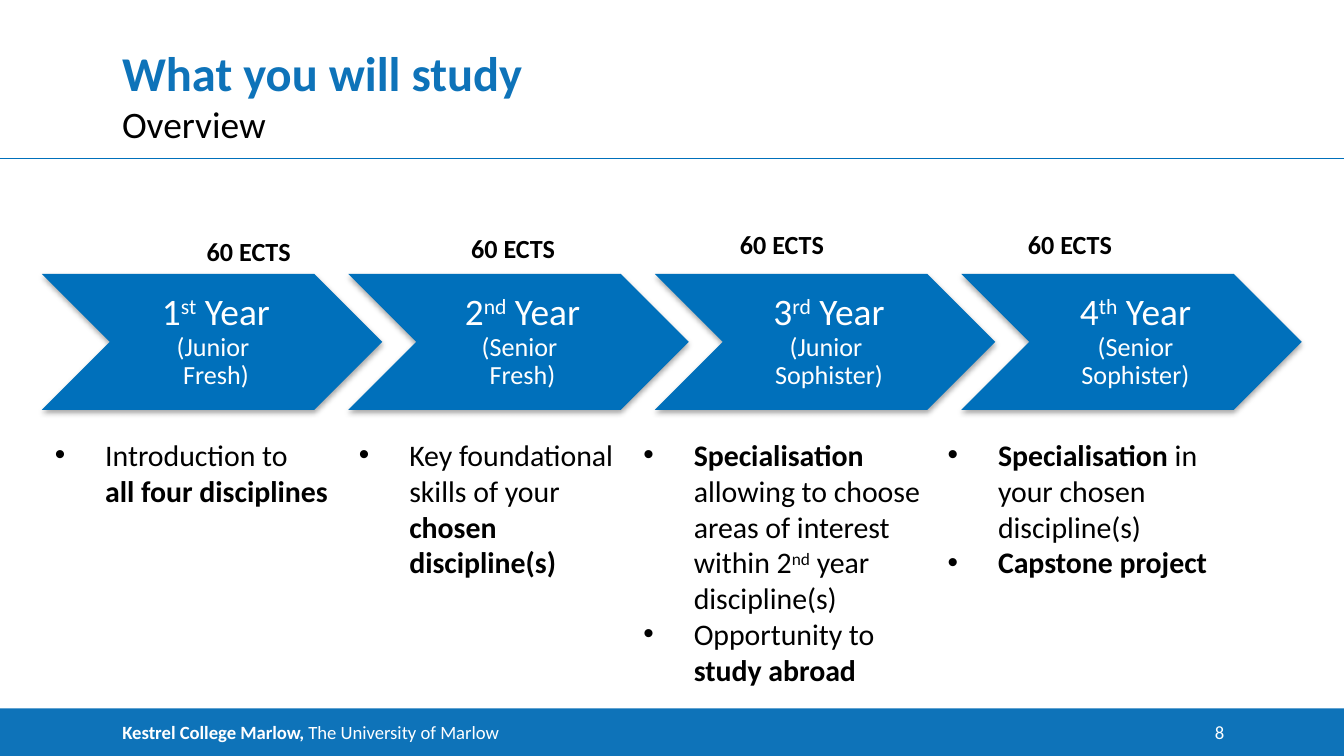
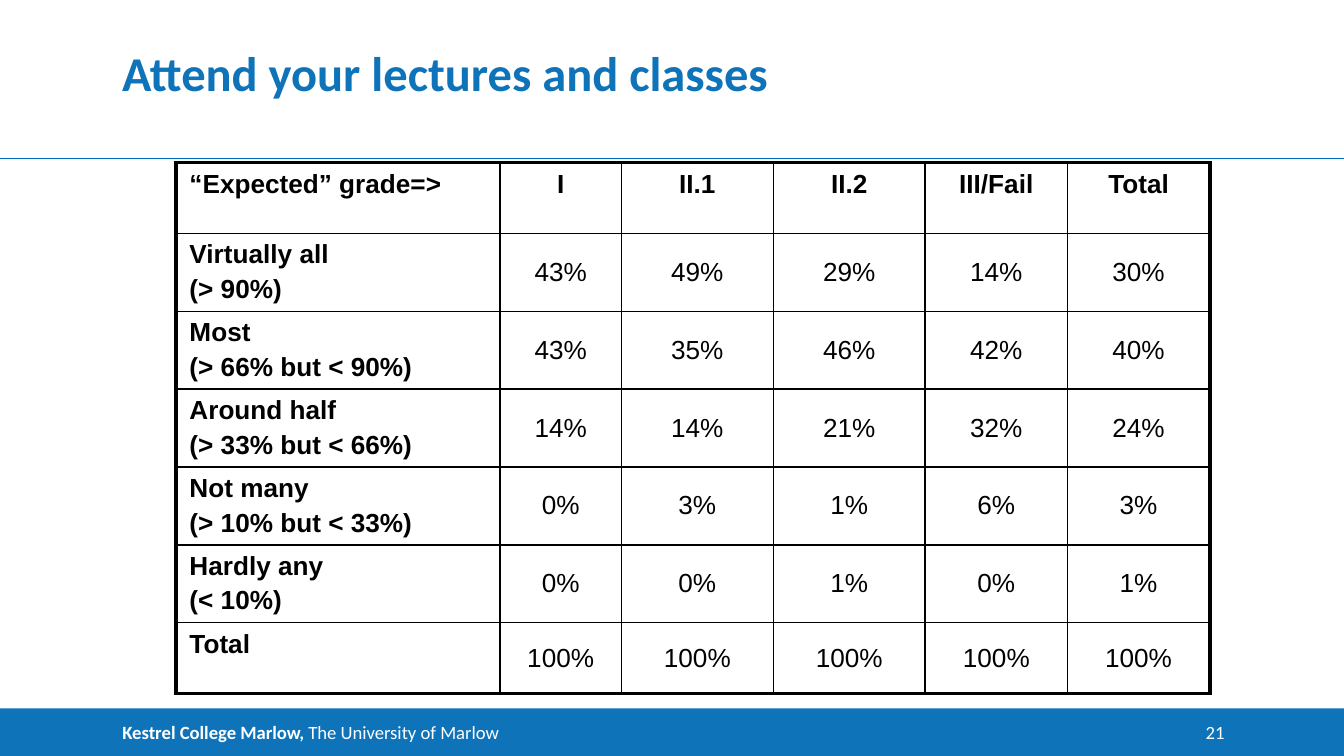
from copy import deepcopy
from dataclasses import dataclass
from typing import NamedTuple

from lxml.etree import SubElement
from pptx import Presentation
from pptx.dml.color import RGBColor
from pptx.enum.shapes import MSO_CONNECTOR, MSO_SHAPE
from pptx.enum.text import MSO_ANCHOR, PP_ALIGN
from pptx.oxml.ns import qn
from pptx.util import Pt


@dataclass(frozen=True)
class Theme:
    band: RGBColor = RGBColor(0x0E, 0x73, 0xB9)
    accent: RGBColor = RGBColor(0x00, 0x70, 0xBB)
    black: RGBColor = RGBColor(0, 0, 0)
    white: RGBColor = RGBColor(255, 255, 255)
    font: str = "Calibri"
    table_font: str = "Arial"
    title_size: float = 26
    heading_size: float = 20
    body_size: float = 16
    label_size: float = 14
    footer_size: float = 10


THEME = Theme()


class Box(NamedTuple):
    left: float
    top: float
    width: float
    height: float

    def lengths(self) -> list:
        return [Pt(value) for value in self]


class Span(NamedTuple):
    text: str
    bold: bool = False
    size: float | None = None
    raised: bool = False


@dataclass(frozen=True)
class StudyYear:
    number: str
    suffix: str
    stage: str
    credits_left: float
    credits_top: float
    points_left: float
    points_height: float
    points: list


STUDY_YEARS = [
    StudyYear("1", "st", "(Junior \nFresh)", 103.7, 122.4, 22.3, 46,
              [[Span("Introduction to \n"), Span("all four disciplines", True)]]),
    StudyYear("2", "nd", "(Senior \nFresh)", 245.3, 121, 185.2, 85,
              [[Span("Key foundational skills of your "), Span("chosen discipline(s)", True)]]),
    StudyYear("3", "rd", "(Junior \nSophister)", 389.3, 118.8, 337.6, 143,
              [[Span("Specialisation", True), Span(" allowing to choose areas of interest within 2"),
                Span("nd", raised=True), Span(" year discipline(s)")],
               [Span("Opportunity to "), Span("study abroad", True)]]),
    StudyYear("4", "th", "(Senior Sophister)", 543.6, 118.8, 500.6, 85,
              [[Span("Specialisation", True), Span(" in your chosen discipline(s)")],
               [Span("Capstone project", True)]]),
]

CHEVRON = Box(22.4, 146.8, 182.4, 72.8)
CHEVRON_PITCH = 164.2

COLUMN_WIDTHS = [173.6, 65, 81.4, 81.4, 76.2, 76.2]
ROW_HEIGHTS = [38, *[41.7] * 5, 38]
GRADE_ROWS = [
    ["“Expected” grade=>", "I", "II.1", "II.2", "III/Fail", "Total"],
    ["Virtually all\n(> 90%)", "43%", "49%", "29%", "14%", "30%"],
    ["Most\n(> 66% but < 90%)", "43%", "35%", "46%", "42%", "40%"],
    ["Around half\n(> 33% but < 66%)", "14%", "14%", "21%", "32%", "24%"],
    ["Not many\n(> 10% but < 33%)", "0%", "3%", "1%", "6%", "3%"],
    ["Hardly any\n(< 10%)", "0%", "0%", "1%", "0%", "1%"],
    ["Total", *["100%"] * 5],
]


def set_percent_spacing(paragraph, tag: str, percent: float) -> None:
    if tag == "a:spcBef":
        paragraph.space_before = Pt(0)
    else:
        paragraph.space_after = Pt(0)
    spacing = paragraph._p.pPr.find(qn(tag))
    spacing.remove(spacing[0])
    SubElement(spacing, qn("a:spcPct"), val=str(int(percent * 1000)))


def set_indent(paragraph, margin: float, first_line: float = 0, bullet: str = "") -> None:
    properties = paragraph._p.get_or_add_pPr()
    properties.set("marL", str(Pt(margin)))
    properties.set("indent", str(Pt(first_line)))
    if bullet:
        SubElement(properties, qn("a:buFont"), typeface="Arial")
        SubElement(properties, qn("a:buChar"), char=bullet)


def add_span(paragraph, span: Span, size: float, color: RGBColor, font: str) -> None:
    for index, line in enumerate(span.text.split("\n")):
        if index:
            paragraph.add_line_break()
            paragraph._p.findall(qn("a:br"))[-1].append(deepcopy(run._r.rPr))
        if index and not line:
            continue
        run = paragraph.add_run()
        run.text = line
        run.font.name = font
        run.font.size = Pt(span.size or size)
        run.font.bold = span.bold
        run.font.color.rgb = color
        if span.raised:
            run._r.rPr.set("baseline", "30000")


def write_text(frame, paragraphs: list, *, size: float, color: RGBColor = THEME.black,
               font: str = THEME.font, align=PP_ALIGN.LEFT, anchor=MSO_ANCHOR.TOP,
               insets: tuple | None = None, wrap: bool = True, line_spacing: float | None = None,
               before: float | None = None, before_percent: float | None = None,
               after_percent: float | None = None, indent: tuple | None = None) -> None:
    frame.word_wrap = wrap
    frame.vertical_anchor = anchor
    if insets is not None:
        frame.margin_left, frame.margin_top, frame.margin_right, frame.margin_bottom = map(Pt, insets)
    for index, spans in enumerate(paragraphs):
        paragraph = frame.add_paragraph() if index else frame.paragraphs[0]
        paragraph.alignment = align
        if line_spacing:
            paragraph.line_spacing = line_spacing
        if before:
            paragraph.space_before = Pt(before)
        if before_percent:
            set_percent_spacing(paragraph, "a:spcBef", before_percent)
        if after_percent:
            set_percent_spacing(paragraph, "a:spcAft", after_percent)
        if indent:
            set_indent(paragraph, *indent)
        for span in spans:
            add_span(paragraph, span, size, color, font)


def add_text(slide, box: Box, paragraphs: list, **text_format) -> None:
    write_text(slide.shapes.add_textbox(*box.lengths()).text_frame, paragraphs, **text_format)


def add_filled_shape(slide, kind, box: Box, color: RGBColor):
    shape = slide.shapes.add_shape(kind, *box.lengths())
    shape.shadow.inherit = False
    shape.fill.solid()
    shape.fill.fore_color.rgb = color
    shape.line.fill.background()
    return shape


def add_soft_shadow(shape) -> None:
    effects = shape._element.spPr.find(qn("a:effectLst"))
    shadow = SubElement(effects, qn("a:outerShdw"), blurRad=str(Pt(3.1)), dist=str(Pt(1.8)),
                        dir="5400000", rotWithShape="0")
    color = SubElement(shadow, qn("a:srgbClr"), val=str(THEME.black))
    SubElement(color, qn("a:alpha"), val="35000")


def add_base_slide(presentation, title: str, page: str):
    slide = presentation.slides.add_slide(presentation.slide_layouts[6])
    footer = add_filled_shape(slide, MSO_SHAPE.RECTANGLE, Box(0, 379.5, 720, 25.5), THEME.band)
    write_text(footer.text_frame,
               [[Span("Kestrel College Marlow, ", True), Span("The University of Marlow")]],
               size=THEME.footer_size, color=THEME.white, anchor=MSO_ANCHOR.MIDDLE,
               insets=(8, 0, 0, 0), indent=(57.6,))
    rule = slide.shapes.add_connector(MSO_CONNECTOR.STRAIGHT, Pt(0), Pt(85), Pt(720), Pt(85))
    rule.line.color.rgb = THEME.accent
    rule.line.width = Pt(0.75)
    SubElement(rule._element.spPr, qn("a:effectLst"))
    add_text(slide, Box(626.4, 386, 29.5, 12.2), [[Span(page)]], size=THEME.footer_size,
             color=THEME.white, align=PP_ALIGN.RIGHT, insets=(0, 0, 0, 0))
    add_text(slide, Box(65.4, 21.2, 590.4, 33), [[Span(title, True)]], size=THEME.title_size,
             color=THEME.band, anchor=MSO_ANCHOR.BOTTOM, insets=(0, 0, 0, 0))
    return slide


def add_study_year(slide, year: StudyYear, index: int) -> None:
    box = CHEVRON._replace(left=CHEVRON.left + index * CHEVRON_PITCH)
    add_soft_shadow(add_filled_shape(slide, MSO_SHAPE.CHEVRON, box, THEME.accent))
    add_text(slide, box._replace(left=box.left + box.height / 2, width=box.width - box.height),
             [[Span(year.number), Span(year.suffix, raised=True), Span(" Year\n"),
               Span(year.stage, size=THEME.label_size)]],
             size=THEME.heading_size, color=THEME.white, align=PP_ALIGN.CENTER,
             anchor=MSO_ANCHOR.MIDDLE, insets=(6.5, 2.2, 2.2, 2.2), line_spacing=0.9,
             after_percent=35)
    add_text(slide, Box(year.points_left, 230.4, 163.4, year.points_height), year.points,
             size=THEME.body_size, indent=(27, -27, "•"))
    add_text(slide, Box(year.credits_left, year.credits_top, 59.8, 24.2),
             [[Span("60 ECTS", True)]], size=THEME.label_size, wrap=False)


def set_cell_borders(cell, widths: dict) -> None:
    properties = cell._tc.get_or_add_tcPr()
    for side, width in widths.items():
        line = SubElement(properties, qn(f"a:ln{side}"), w=str(Pt(width)))
        fill = SubElement(line, qn("a:solidFill"))
        SubElement(fill, qn("a:srgbClr"), val=str(THEME.black))


def add_grade_table(slide) -> None:
    row_count, column_count = len(ROW_HEIGHTS), len(COLUMN_WIDTHS)
    box = Box(94.3, 87.1, sum(COLUMN_WIDTHS), sum(ROW_HEIGHTS))
    table = slide.shapes.add_table(row_count, column_count, *box.lengths()).table
    table.first_row = table.horz_banding = False
    for column, width in zip(table.columns, COLUMN_WIDTHS):
        column.width = Pt(width)
    for row_index, (row, height) in enumerate(zip(table.rows, ROW_HEIGHTS)):
        row.height = Pt(height)
        for column_index, text in enumerate(GRADE_ROWS[row_index]):
            cell = table.cell(row_index, column_index)
            outer = {"L": column_index == 0, "R": column_index == column_count - 1,
                     "T": row_index == 0, "B": row_index == row_count - 1}
            set_cell_borders(cell, {side: 2.25 if edge else 1 for side, edge in outer.items()})
            cell.fill.solid()
            cell.fill.fore_color.rgb = THEME.white
            heading = outer["L"] or outer["T"]
            write_text(cell.text_frame, [[Span(line, heading)] for line in text.split("\n")],
                       size=THEME.label_size, font=THEME.table_font, before_percent=20,
                       align=PP_ALIGN.LEFT if outer["L"] else PP_ALIGN.CENTER)
            cell.vertical_anchor = MSO_ANCHOR.TOP if heading else MSO_ANCHOR.MIDDLE
            if heading:
                cell.margin_bottom = Pt(0.5)


def main() -> None:
    presentation = Presentation()
    presentation.slide_width, presentation.slide_height = Pt(720), Pt(405)
    overview = add_base_slide(presentation, "What you will study", "8")
    add_text(overview, Box(65.4, 54, 590.4, 16.6), [[Span("Overview")]],
             size=THEME.heading_size, insets=(0, 0, 0, 0), before=14.2)
    for index, year in enumerate(STUDY_YEARS):
        add_study_year(overview, year, index)
    add_grade_table(add_base_slide(presentation, "Attend your lectures and classes", "21"))
    presentation.save("out.pptx")


if __name__ == "__main__":
    main()
